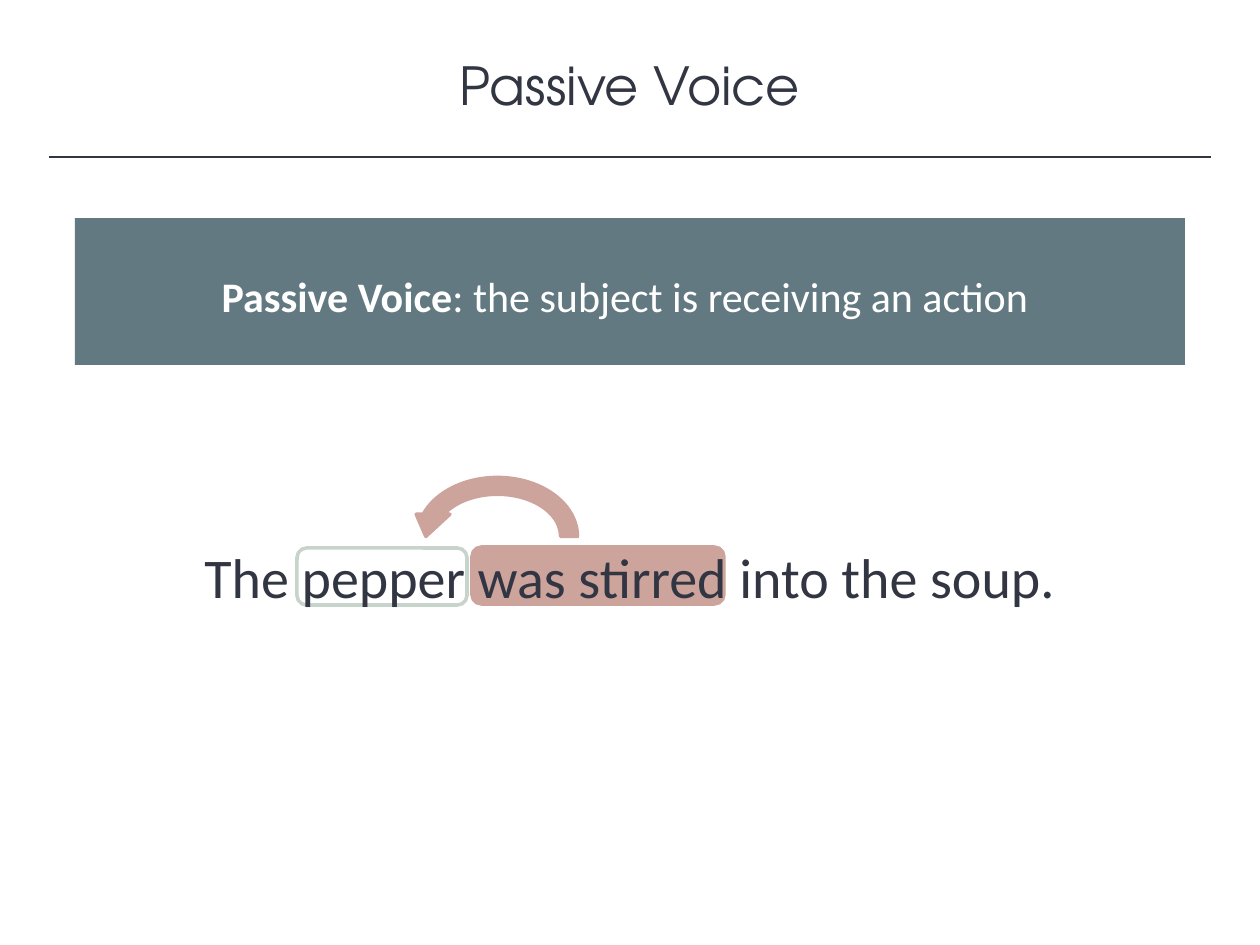
from pptx import Presentation
from pptx.dml.color import RGBColor
from pptx.enum.shapes import MSO_CONNECTOR, MSO_SHAPE
from pptx.enum.text import MSO_ANCHOR, MSO_AUTO_SIZE, PP_ALIGN
from pptx.oxml.ns import qn
from pptx.util import Emu, Pt
from lxml.etree import SubElement

PX_PER_INCH = 126
WIDTH, HEIGHT = 1260, 945

INK = RGBColor(0x32, 0x35, 0x42)
TEAL = RGBColor(0x62, 0x79, 0x81)
ROSE = RGBColor(0xCC, 0xA4, 0x9C)
SAGE = RGBColor(0xC7, 0xD4, 0xCB)
WHITE = RGBColor(0xFF, 0xFF, 0xFF)

TITLE = {"name": "TeX Gyre Adventor", "size": Pt(30)}
DEFINITION = {"name": "Calibri", "size": Pt(24)}
EXAMPLE = {"name": "Calibri", "size": Pt(32)}


def px(n):
    return Emu(round(n * 914400 / PX_PER_INCH))


def write(sp, runs, style, color, anchor=MSO_ANCHOR.TOP):
    """Fill a shape with one centred paragraph of (text, bold) runs."""
    tf = sp.text_frame
    frame = {"word_wrap": True, "auto_size": MSO_AUTO_SIZE.SHAPE_TO_FIT_TEXT,
             "vertical_anchor": anchor}
    for key, value in frame.items():
        setattr(tf, key, value)
    p = tf.paragraphs[0]
    p.alignment = PP_ALIGN.CENTER
    for text, bold in runs:
        r = p.add_run()
        r.text = text
        for key, value in {**style, "bold": bold}.items():
            setattr(r.font, key, value)
        r.font.color.rgb = color
    return p


def add_block(s, kind, box, fill=None, line=None):
    sp = s.shapes.add_shape(kind, *map(px, box))
    sp.shadow.inherit = False
    if fill is None:
        sp.fill.background()
    else:
        sp.fill.solid()
        sp.fill.fore_color.rgb = fill
    if line is None:
        sp.line.fill.background()
    else:
        sp.line.color.rgb = line
        sp.line.width = Pt(2)
    return sp


def add_rule(s, x1, x2, y):
    line = s.shapes.add_connector(MSO_CONNECTOR.STRAIGHT, px(x1), px(y), px(x2), px(y))
    line.line.color.rgb = INK
    line.line.width = Pt(1)
    SubElement(line._element.spPr, qn("a:effectLst"))


def add_title(s, text):
    sp = s.shapes.title
    sp.left, sp.top, sp.width, sp.height = map(px, (0, 47, WIDTH, 77))
    write(sp, [(text, False)], TITLE, INK)


def main():
    prs = Presentation()
    prs.slide_width, prs.slide_height = px(WIDTH), px(HEIGHT)
    s = prs.slides.add_slide(prs.slide_layouts[5])

    # Heading
    add_title(s, "Passive Voice")
    add_rule(s, 49, 1211, 157)

    # Definition band
    add_block(s, MSO_SHAPE.RECTANGLE, (75, 218, 1110, 147), TEAL)
    label = add_block(s, MSO_SHAPE.RECTANGLE, (87, 264, 1076, 63), TEAL)
    write(label, [("Passive Voice", True),
                  (": the subject is receiving an action", False)], DEFINITION, WHITE)

    # Verb highlight, with an arrow back to the outlined subject
    add_block(s, MSO_SHAPE.ROUNDED_RECTANGLE, (472, 547, 252, 57), ROSE, ROSE)
    arrow = add_block(s, MSO_SHAPE.CIRCULAR_ARROW, (409, 469, 177, 135), ROSE, ROSE)
    arrow._element.spPr.xfrm.set("flipH", "1")
    add_block(s, MSO_SHAPE.ROUNDED_RECTANGLE, (297, 548, 170, 57), line=SAGE)

    # Example sentence
    sentence = s.shapes.add_textbox(*map(px, (92, 536, 1076, 81)))
    p = write(sentence, [("The pepper was stirred into the soup.", False)],
              EXAMPLE, INK, MSO_ANCHOR.MIDDLE)
    p.space_after = Pt(18)

    prs.save("out.pptx")


if __name__ == "__main__":
    main()
